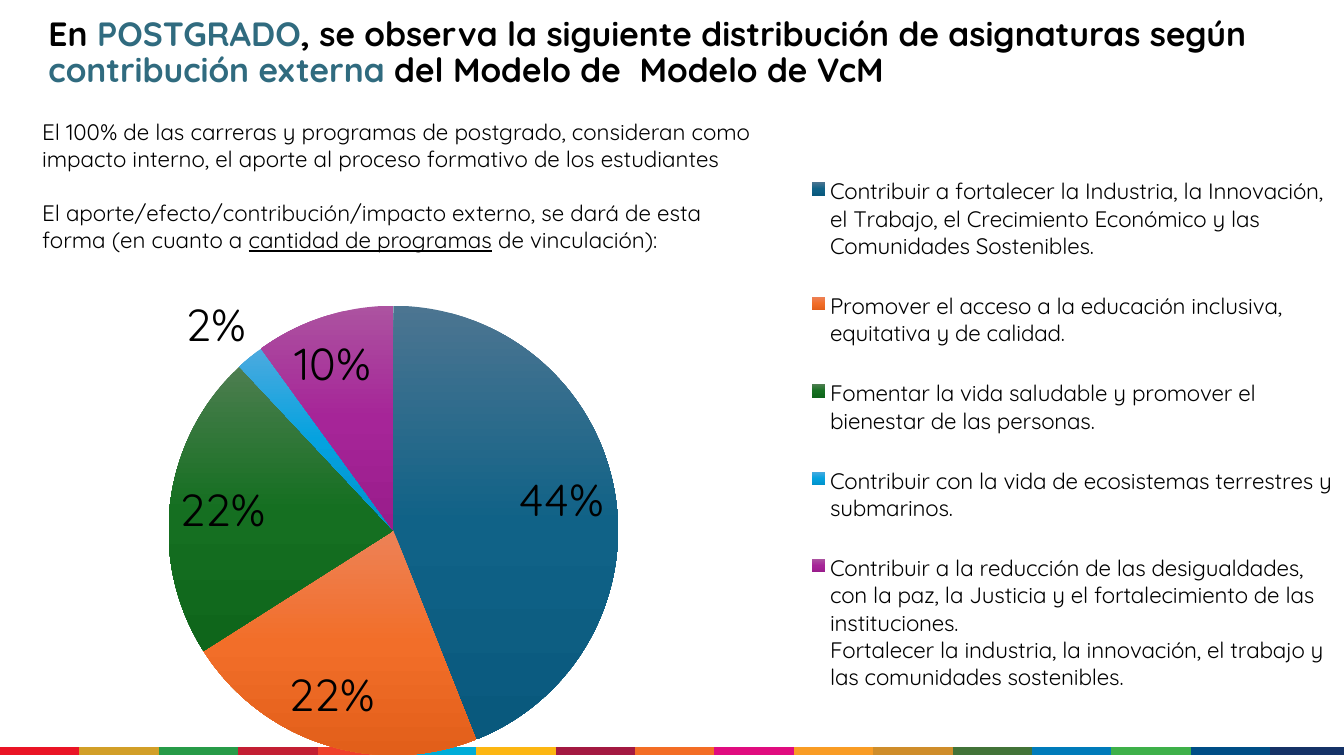
from copy import deepcopy
from dataclasses import dataclass

from lxml import etree
from pptx import Presentation
from pptx.chart.data import CategoryChartData
from pptx.dml.color import RGBColor
from pptx.enum.chart import XL_CHART_TYPE as ChartType
from pptx.enum.chart import XL_LABEL_POSITION as LabelPosition
from pptx.enum.chart import XL_LEGEND_POSITION as LegendPosition
from pptx.enum.shapes import MSO_CONNECTOR as Connector
from pptx.enum.text import MSO_ANCHOR as Anchor
from pptx.enum.text import PP_ALIGN as Align
from pptx.oxml.ns import qn
from pptx.util import Pt


@dataclass(frozen=True)
class Theme:
    font: str = "Quicksand"
    text: str = "000000"
    accent: str = "306B7F"
    title_size: int = 24
    body_size: int = 16
    label_size: int = 32
    stripes: tuple = (
        "EA1425", "D29F28", "279B48", "C31F33", "EF402B", "00ADD8",
        "FCB612", "A31941", "F36D25", "E00C7F", "F99C24", "CF8D2A",
        "427338", "007BBA", "3EB049", "004E86", "153266")
    slices: tuple = (
        ("4C7591", "106287", "09597D"),
        ("ED8257", "F26E29", "E25F1A"),
        ("4D7E50", "156F21", "0F661B"),
        ("4CAADF", "05A2DF", "0092CB"),
        ("AC53A0", "A62598", "991C8B"))


THEME = Theme()
SLIDE_WIDTH, SLIDE_HEIGHT = 960, 540

CONTRIBUTIONS = {
    "Contribuir a fortalecer la Industria, la Innovación, el Trabajo, "
    "el Crecimiento Económico y las Comunidades Sostenibles.": 44,
    "Promover el acceso a la educación inclusiva, equitativa y de calidad.": 22,
    "Fomentar la vida saludable y promover el bienestar de las personas.": 22,
    "Contribuir con la vida de ecosistemas terrestres y submarinos.": 2,
    "Contribuir a la reducción de las desigualdades, con la paz, la Justicia "
    "y el fortalecimiento de las instituciones.\n"
    "Fortalecer la industria, la innovación, el trabajo y las comunidades "
    "sostenibles.": 10,
}


def style_font(font, size, color=THEME.text):
    font.name = THEME.font
    font.size = Pt(size)
    font.color.rgb = RGBColor.from_string(color)


def points(box):
    return [Pt(length) for length in box]


def add_stripes(slide, box, pitch=56.7):
    left, top, width, height = box
    middle = Pt(top + height / 2)
    for index, color in enumerate(THEME.stripes):
        start = left + index * pitch
        end = min(start + pitch, left + width)
        stripe = slide.shapes.add_connector(
            Connector.STRAIGHT, Pt(start), middle, Pt(end), middle)
        stripe.line.width = Pt(height)
        stripe.line.color.rgb = RGBColor.from_string(color)
        etree.SubElement(stripe.line._get_or_add_ln().getparent(),
                         qn("a:effectLst"))


def add_title(slide, box):
    title = slide.shapes.title
    title.left, title.top, title.width, title.height = points(box)
    frame = title.text_frame
    frame.word_wrap = True
    frame.vertical_anchor = Anchor.MIDDLE
    heading = frame.paragraphs[0]
    heading.alignment = Align.LEFT
    heading.line_spacing = 0.9
    heading.font.name = THEME.font
    heading.font.size = Pt(THEME.title_size)
    heading.font.bold = True
    for words, color in (
            ("En ", THEME.text),
            ("POSTGRADO", THEME.accent),
            (", se observa la siguiente distribución de asignaturas según ",
             THEME.text),
            ("contribución externa", THEME.accent),
            (" del Modelo de  Modelo de VcM", THEME.text)):
        run = heading.add_run()
        run.text = words
        run.font.color.rgb = RGBColor.from_string(color)


def set_layout(parent, position, x, y, width, height, inner=False):
    """Place a chart part by fractions of the chart area."""
    for existing in parent.findall(qn("c:layout")):
        parent.remove(existing)
    layout = etree.Element(qn("c:layout"))
    manual = etree.SubElement(layout, qn("c:manualLayout"))
    settings = [("layoutTarget", "inner")] if inner else []
    settings += [("xMode", "edge"), ("yMode", "edge"),
                 ("x", x), ("y", y), ("w", width), ("h", height)]
    for tag, value in settings:
        etree.SubElement(manual, qn(f"c:{tag}")).set("val", str(value))
    parent.insert(position, layout)


def fill_slice(fill, colors):
    fill.gradient()
    fill.gradient_angle = 270
    stop_list = fill.gradient_stops[0]._gs.getparent()
    stop_list.append(deepcopy(stop_list[-1]))
    for stop, position, color in zip(fill.gradient_stops, (0, 0.5, 1), colors):
        stop.position = position
        stop.color.rgb = RGBColor.from_string(color)


def add_pie(slide, box):
    data = CategoryChartData()
    data.categories = list(CONTRIBUTIONS)
    data.add_series("Series 1", list(CONTRIBUTIONS.values()))
    chart = slide.shapes.add_chart(ChartType.PIE, *points(box), data).chart
    chart.has_title = False
    style_font(chart.font, 18)

    # Legend
    chart.has_legend = True
    legend = chart.legend
    legend.position = LegendPosition.RIGHT
    legend.include_in_layout = False
    style_font(legend.font, THEME.body_size)
    set_layout(legend._element, 1, 0.6, 0.05, 0.4, 0.9)

    # Slices and percentages
    pie = chart.plots[0]
    pie.vary_by_categories = True
    set_layout(pie._element.getparent(), 0, 0.046, 0.3, 0.473, 0.699, True)
    for index, colors in enumerate(THEME.slices):
        fill_slice(pie.series[0].points[index].format.fill, colors)
    pie.has_data_labels = True
    labels = pie.data_labels
    labels.show_value = False
    labels.show_percentage = True
    labels.number_format = "0%"
    labels.number_format_is_linked = False
    labels.position = LabelPosition.BEST_FIT
    style_font(labels.font, THEME.label_size)


def add_introduction(slide, box):
    frame = slide.shapes.add_textbox(*points(box)).text_frame
    frame.word_wrap = True
    impact = frame.paragraphs[0]
    impact.text = ("El 100% de las carreras y programas de postgrado, "
                   "consideran como impacto interno, el aporte al proceso "
                   "formativo de los estudiantes")
    external = frame.add_paragraph()
    external.space_before = Pt(20)
    for words, underlined in (
            ("El aporte/efecto/contribución/impacto externo, se dará de esta "
             "forma (en cuanto a ", False),
            ("cantidad de programas", True),
            (" de vinculación):", False)):
        run = external.add_run()
        run.text = words
        if underlined:
            run.font.underline = True
    for paragraph in frame.paragraphs:
        style_font(paragraph.font, THEME.body_size)


def main():
    deck = Presentation()
    deck.slide_width, deck.slide_height = Pt(SLIDE_WIDTH), Pt(SLIDE_HEIGHT)
    slide = deck.slides.add_slide(deck.slide_layouts[5])
    add_stripes(slide, (0, 533.4, SLIDE_WIDTH, 6))
    add_title(slide, (27.4, 2.2, 910.8, 72))
    add_pie(slide, (13.7, 80.6, 946, 459.4))
    add_introduction(slide, (23, 80.6, 534.2, 123.8))
    deck.save("out.pptx")


if __name__ == "__main__":
    main()
